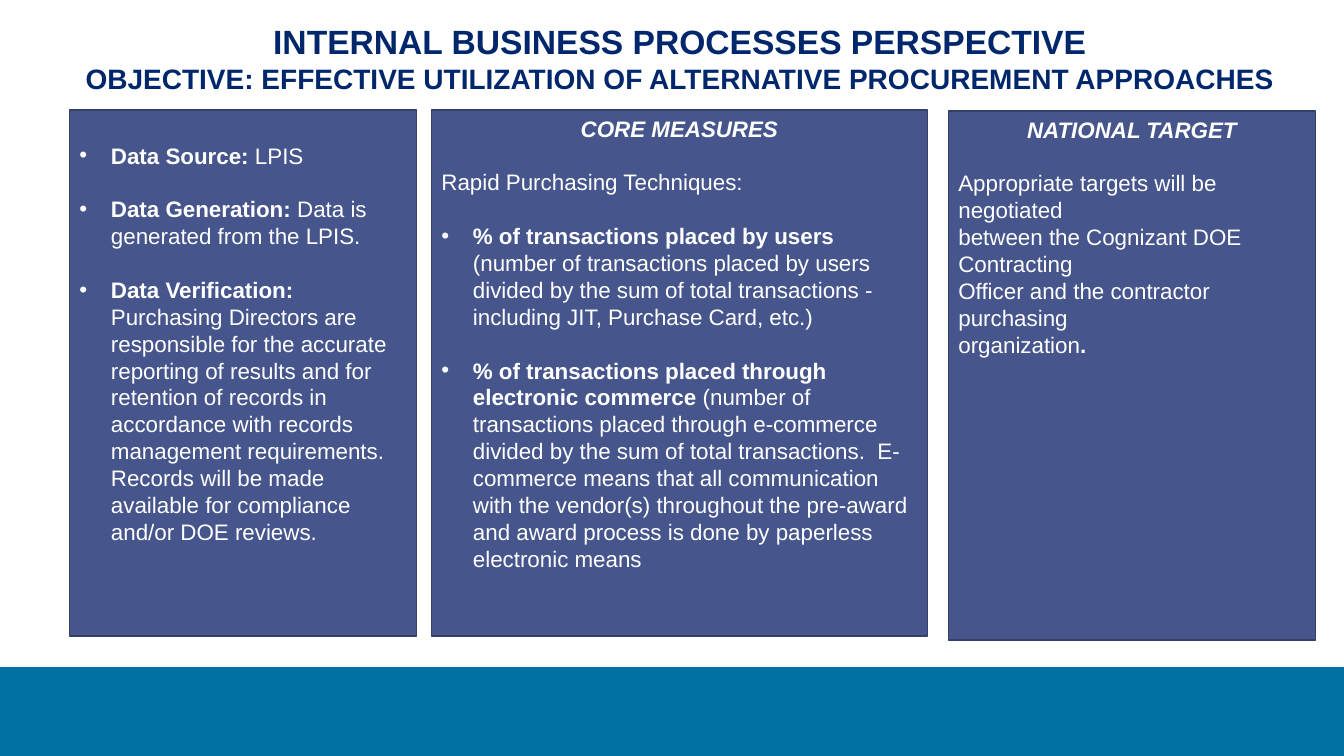
from dataclasses import dataclass

import pptx
import pptx.dml.color
import pptx.enum.shapes
import pptx.enum.text
import pptx.util
from lxml import etree
from pptx.oxml.ns import qn

Pt = pptx.util.Pt
RGBColor = pptx.dml.color.RGBColor
Align = pptx.enum.text.PP_ALIGN

WHITE = RGBColor(0xFF, 0xFF, 0xFF)
NAVY = RGBColor(0x00, 0x26, 0x6C)
PANEL_FILL = RGBColor(0x46, 0x56, 0x8C)
PANEL_EDGE = RGBColor(0x34, 0x40, 0x68)
FOOTER_BLUE = RGBColor(0x00, 0x71, 0xA3)

PAGE_WIDTH, PAGE_HEIGHT = 960, 540
FOOTER_TOP = 476.5
BODY_SIZE = 16
LINE_PITCH = 19.2
INSET_X, INSET_Y = 7.2, 3.6
BULLET_INDENT = 22.5


@dataclass
class Span:
    text: str
    bold: bool = False
    italic: bool = False
    size: float = BODY_SIZE
    color: RGBColor = WHITE


@dataclass
class Para:
    spans: list[Span]
    align: Align = Align.LEFT
    bullet: bool = False
    gap: bool = False


@dataclass
class Panel:
    left: float
    top: float
    width: float
    height: float
    paras: list[Para]
    blank_top: float = 0


def heading(text: str) -> Para:
    return Para([Span(text, bold=True, italic=True)], Align.CENTER)


def bullet(label: str, text: str, gap: bool = True) -> Para:
    return Para([Span(label, bold=True), Span(text)], bullet=True, gap=gap)


def title_line(text: str, size: float) -> Para:
    return Para([Span(text, bold=True, size=size, color=NAVY)], Align.CENTER)


TITLE = [
    title_line("INTERNAL BUSINESS PROCESSES PERSPECTIVE", 24),
    title_line("OBJECTIVE: EFFECTIVE UTILIZATION OF ALTERNATIVE PROCUREMENT APPROACHES", 20),
]

PANELS = [
    Panel(49.7, 78.5, 247.7, 375.8, [
        bullet("Data Source: ", "LPIS", gap=False),
        bullet("Data Generation: ", "Data is generated from the LPIS."),
        bullet("Data Verification: ",
               "Purchasing Directors are responsible for the accurate reporting of "
               "results and for retention of records in accordance with records "
               "management requirements. Records will be made available for "
               "compliance and/or DOE reviews."),
    ], blank_top=LINE_PITCH),
    Panel(308.2, 78.5, 354.2, 375.8, [
        heading("CORE MEASURES"),
        Para([Span("Rapid Purchasing Techniques:")], gap=True),
        bullet("% of transactions placed by users ",
               "(number of transactions placed by users divided by the sum of total "
               "transactions - including JIT, Purchase Card, etc.)"),
        bullet("% of transactions placed through electronic commerce ",
               "(number of transactions placed through e-commerce divided by the sum "
               "of total transactions.  E-commerce means that all communication with "
               "the vendor(s) throughout the pre-award and award process is done by "
               "paperless electronic means"),
    ]),
    Panel(677.5, 79.2, 262.1, 378, [
        heading("NATIONAL TARGET"),
        Para([Span("Appropriate targets will be negotiated")], gap=True),
        Para([Span("between the Cognizant DOE Contracting")]),
        Para([Span("Officer and the contractor purchasing")]),
        Para([Span("organization"), Span(".", bold=True)]),
    ]),
]


def set_all(target: object, values: dict[str, object]) -> None:
    for name, value in values.items():
        setattr(target, name, value)


def add_bullet(paragraph) -> None:
    properties = paragraph._p.get_or_add_pPr()
    properties.set("marL", str(Pt(BULLET_INDENT)))
    properties.set("indent", str(-Pt(BULLET_INDENT)))
    etree.SubElement(properties, qn("a:buFont")).set("typeface", "Arial")
    etree.SubElement(properties, qn("a:buChar")).set("char", "•")


def write_text(frame, paras: list[Para], blank_top: float = 0,
               pitch: float | None = None) -> None:
    """Fill a text frame; pitch, if given, fixes the line height in points."""
    set_all(frame, {
        "word_wrap": True,
        "vertical_anchor": pptx.enum.text.MSO_ANCHOR.TOP,
        "margin_left": Pt(INSET_X), "margin_right": Pt(INSET_X),
        "margin_top": Pt(INSET_Y + blank_top), "margin_bottom": Pt(INSET_Y),
    })
    for index, para in enumerate(paras):
        paragraph = frame.add_paragraph() if index else frame.paragraphs[0]
        if para.bullet:
            add_bullet(paragraph)
        set_all(paragraph, {
            "alignment": para.align,
            "space_before": Pt(LINE_PITCH if para.gap else 0),
            "line_spacing": Pt(pitch) if pitch else None,
        })
        for span in para.spans:
            run = paragraph.add_run()
            run.text = span.text
            set_all(run.font, {"name": "Arial", "size": Pt(span.size),
                               "bold": span.bold, "italic": span.italic})
            run.font.color.rgb = span.color


def add_rectangle(page, left: float, top: float, width: float, height: float,
                  fill: RGBColor, edge: RGBColor | None = None):
    box = page.shapes.add_shape(pptx.enum.shapes.MSO_SHAPE.RECTANGLE,
                                Pt(left), Pt(top), Pt(width), Pt(height))
    box.shadow.inherit = False
    box.fill.solid()
    box.fill.fore_color.rgb = fill
    if edge is None:
        box.line.fill.background()
    else:
        box.line.color.rgb = edge
        box.line.width = Pt(1)
    return box


def main() -> None:
    deck = pptx.Presentation()
    set_all(deck, {"slide_width": Pt(PAGE_WIDTH), "slide_height": Pt(PAGE_HEIGHT)})
    page = deck.slides.add_slide(deck.slide_layouts[6])
    add_rectangle(page, 0, FOOTER_TOP, PAGE_WIDTH, PAGE_HEIGHT - FOOTER_TOP, FOOTER_BLUE)
    title = page.shapes.add_textbox(Pt(31.7), Pt(11.5), Pt(907.9), Pt(60.5))
    write_text(title.text_frame, TITLE)
    for panel in PANELS:
        box = add_rectangle(page, panel.left, panel.top, panel.width, panel.height,
                            PANEL_FILL, PANEL_EDGE)
        write_text(box.text_frame, panel.paras, panel.blank_top, LINE_PITCH)
    deck.save("out.pptx")


if __name__ == "__main__":
    main()
